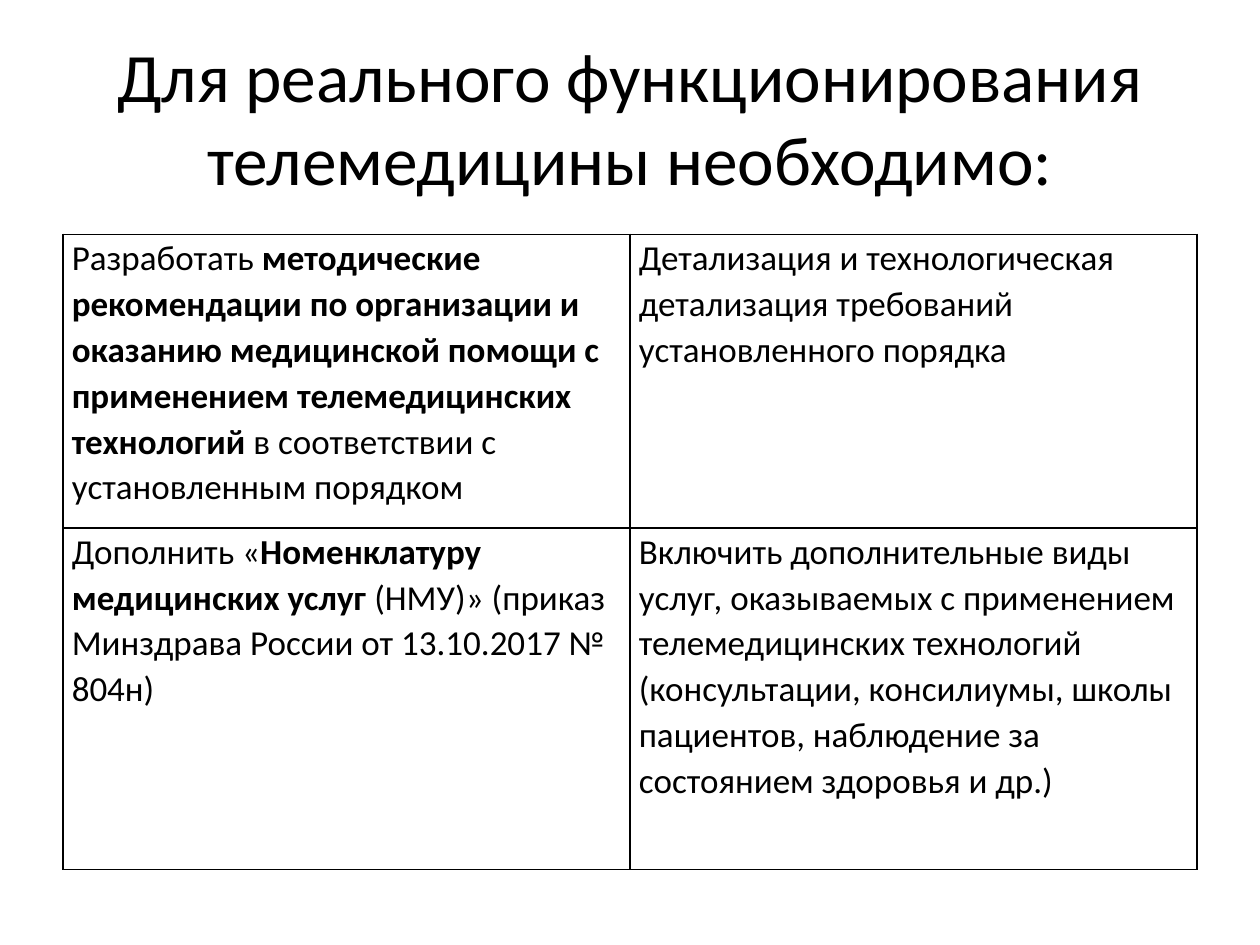
from dataclasses import dataclass

from lxml.etree import SubElement
from pptx import Presentation
from pptx.dml.color import RGBColor
from pptx.enum.text import MSO_ANCHOR, PP_ALIGN
from pptx.oxml.ns import qn
from pptx.util import Inches, Pt


@dataclass(frozen=True)
class Theme:
    """Fonts, sizes and colours of the slide."""
    font: str = "Calibri"
    title_size: float = 39.6
    body_size: float = 20
    ink: str = "000000"
    paper: str = "FFFFFF"
    border_width: float = 1
    line_spacing: float = 1.07


THEME = Theme()
SLIDE_WIDTH, SLIDE_HEIGHT = 10, 7.5
MARGIN = SLIDE_WIDTH / 20
CONTENT_WIDTH = SLIDE_WIDTH - 2 * MARGIN
TITLE_BOX = (MARGIN, SLIDE_HEIGHT * 0.04, CONTENT_WIDTH, SLIDE_HEIGHT / 6)
TABLE_BOX = (MARGIN, 1.86, CONTENT_WIDTH, 5.04)
ROW_HEIGHTS = (2.33, 2.71)

TITLE = "Для реального функционирования телемедицины необходимо:"
MEASURES = [
    [
        [
            ("Разработать ", False),
            ("методические рекомендации по организации и оказанию медицинской "
             "помощи с применением телемедицинских технологий ", True),
            ("в соответствии с установленным порядком", False),
        ],
        [("Детализация и технологическая детализация требований "
          "установленного порядка", False)],
    ],
    [
        [
            ("Дополнить «", False),
            ("Номенклатуру медицинских услуг", True),
            (" (НМУ)» (приказ Минздрава России от 13.10.2017 № 804н)", False),
        ],
        [("Включить дополнительные виды услуг, оказываемых с применением "
          "телемедицинских технологий (консультации, консилиумы, школы "
          "пациентов, наблюдение за состоянием здоровья и др.)", False)],
    ],
]


def style_font(font, size):
    """Apply the theme's typeface and ink at the given size."""
    font.name = THEME.font
    font.size = Pt(size)
    font.color.rgb = RGBColor.from_string(THEME.ink)


def add_title(slide, box, text):
    """Place the centred heading in its box."""
    shape = slide.shapes.add_textbox(*map(Inches, box))
    frame = shape.text_frame
    frame.word_wrap = True
    frame.vertical_anchor = MSO_ANCHOR.MIDDLE
    paragraph = frame.paragraphs[0]
    paragraph.text = text
    paragraph.alignment = PP_ALIGN.CENTER
    style_font(paragraph.font, THEME.title_size)


def add_borders(cell):
    """Draw a thin line on all four sides of a cell."""
    properties = cell._tc.get_or_add_tcPr()
    for position, side in enumerate(("lnL", "lnR", "lnT", "lnB")):
        line = SubElement(properties, qn(f"a:{side}"), w=str(Pt(THEME.border_width)))
        fill = SubElement(line, qn("a:solidFill"))
        SubElement(fill, qn("a:srgbClr"), val=THEME.ink)
        properties.insert(position, line)


def fill_cell(cell, runs):
    """Write the runs of one cell and set its margins, fill and borders."""
    cell.margin_left = cell.margin_right = Inches(0.07)
    cell.margin_top = cell.margin_bottom = 0
    cell.fill.solid()
    cell.fill.fore_color.rgb = RGBColor.from_string(THEME.paper)
    paragraph = cell.text_frame.paragraphs[0]
    paragraph.line_spacing = THEME.line_spacing
    style_font(paragraph.font, THEME.body_size)
    for text, bold in runs:
        run = paragraph.add_run()
        run.text = text
        style_font(run.font, THEME.body_size)
        run.font.bold = bold
    add_borders(cell)


def add_measures_table(slide, box, measures):
    """Place the table of measures with equal columns in its box."""
    shape = slide.shapes.add_table(len(measures), len(measures[0]), *map(Inches, box))
    table = shape.table
    table.first_row = table.horz_banding = False
    for row, height, contents in zip(table.rows, ROW_HEIGHTS, measures):
        row.height = Inches(height)
        for cell, runs in zip(row.cells, contents):
            fill_cell(cell, runs)


def main():
    """Build and save the presentation."""
    presentation = Presentation()
    presentation.slide_width = Inches(SLIDE_WIDTH)
    presentation.slide_height = Inches(SLIDE_HEIGHT)
    slide = presentation.slides.add_slide(presentation.slide_layouts[6])
    add_title(slide, TITLE_BOX, TITLE)
    add_measures_table(slide, TABLE_BOX, MEASURES)
    presentation.save("out.pptx")


if __name__ == "__main__":
    main()
